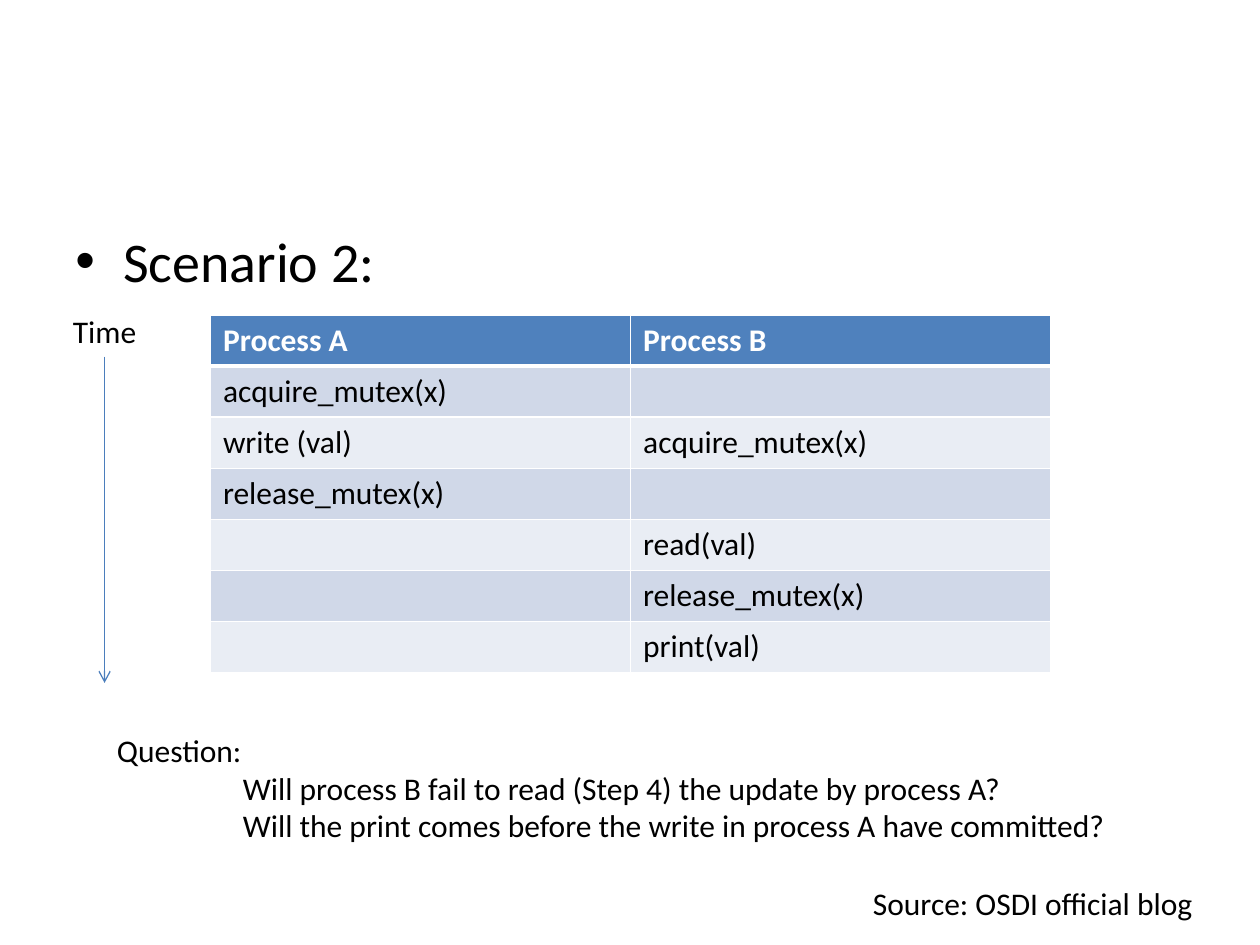
from lxml import etree
from pptx import Presentation
from pptx.dml.color import RGBColor
from pptx.enum.shapes import MSO_CONNECTOR
from pptx.enum.text import MSO_AUTO_SIZE
from pptx.oxml.ns import qn
from pptx.util import Inches, Pt

STRAIGHT = MSO_CONNECTOR.STRAIGHT
FIT_SHAPE = MSO_AUTO_SIZE.SHAPE_TO_FIT_TEXT

BLACK = RGBColor(0x00, 0x00, 0x00)
WHITE = RGBColor(0xFF, 0xFF, 0xFF)
HEADER_BLUE = RGBColor(0x4F, 0x81, 0xBD)
BAND_DARK = RGBColor(0xD0, 0xD8, 0xE8)
BAND_LIGHT = RGBColor(0xE9, 0xED, 0xF4)
ARROW_BLUE = RGBColor(0x4B, 0x7E, 0xBC)

STEPS = [
    ("Process A", "Process B"),
    ("acquire_mutex(x)", ""),
    ("write (val)", "acquire_mutex(x)"),
    ("release_mutex(x)", ""),
    ("", "read(val)"),
    ("", "release_mutex(x)"),
    ("", "print(val)"),
]


class SlideBuilder:
    font = "Calibri"
    size = 18

    def __init__(self, slide):
        self.slide = slide

    def add_run(self, p, text, size=None, color=BLACK, bold=False):
        r = p.add_run()
        r.text = text
        r.font.name = self.font
        r.font.size = Pt(size or self.size)
        r.font.color.rgb = color
        r.font.bold = bold

    def text(self, x, y, w, h, lines, wrap=True):
        """Each line is a (text, left indent in inches) pair."""
        sp = self.slide.shapes.add_textbox(Inches(x), Inches(y), Inches(w), Inches(h))
        tf = sp.text_frame
        tf.word_wrap = wrap
        tf.auto_size = FIT_SHAPE
        for i, (line, indent) in enumerate(lines):
            p = tf.paragraphs[0] if i == 0 else tf.add_paragraph()
            if indent:
                p._p.get_or_add_pPr().set("marL", str(Inches(indent)))
            self.add_run(p, line)

    def bullet(self, x, y, w, h, line, size, indent):
        sp = self.slide.shapes.add_textbox(Inches(x), Inches(y), Inches(w), Inches(h))
        tf = sp.text_frame
        tf.word_wrap = True
        p = tf.paragraphs[0]
        p.space_before = Pt(size * 0.2)
        pPr = p._p.get_or_add_pPr()
        pPr.set("marL", str(Inches(indent)))
        pPr.set("indent", str(-Inches(indent)))
        etree.SubElement(pPr, qn("a:buFont"), typeface="Arial")
        etree.SubElement(pPr, qn("a:buChar"), char="•")
        self.add_run(p, line, size)

    def border(self, cell, side, width):
        ln = etree.SubElement(cell._tc.get_or_add_tcPr(), qn(f"a:ln{side}"), w=str(Pt(width)))
        fill = etree.SubElement(ln, qn("a:solidFill"))
        etree.SubElement(fill, qn("a:srgbClr"), val=str(WHITE))

    def table(self, x, y, w, h, rows):
        table = self.slide.shapes.add_table(
            len(rows), len(rows[0]), Inches(x), Inches(y), Inches(w), Inches(h)).table
        for i, row in enumerate(rows):
            header = i == 0
            fill = HEADER_BLUE if header else (BAND_LIGHT, BAND_DARK)[i % 2]
            for j, label in enumerate(row):
                cell = table.cell(i, j)
                # The rule under the header is heavier than the grid
                widths = {"L": 1, "R": 1, "T": 3 if i == 1 else 1, "B": 3 if header else 1}
                for side, width in widths.items():
                    self.border(cell, side, width)
                cell.fill.solid()
                cell.fill.fore_color.rgb = fill
                if label:
                    self.add_run(cell.text_frame.paragraphs[0], label,
                                 color=WHITE if header else BLACK, bold=header)

    def arrow(self, x1, y1, x2, y2):
        line = self.slide.shapes.add_connector(
            STRAIGHT, Inches(x1), Inches(y1), Inches(x2), Inches(y2))
        line.line.color.rgb = ARROW_BLUE
        line.line.width = Pt(0.75)
        etree.SubElement(line.line._get_or_add_ln(), qn("a:tailEnd"), type="arrow")
        etree.SubElement(line._element.spPr, qn("a:effectLst"))


def main():
    prs = Presentation()
    prs.slide_width = Inches(10)
    prs.slide_height = Inches(7.5)
    s = SlideBuilder(prs.slides.add_slide(prs.slide_layouts[6]))

    # Scenario heading
    s.bullet(0.5, 1.75, 9, 4.95, "Scenario 2:", 32, 0.38)

    # Steps of both processes
    s.table(1.67, 2.5, 6.67, 2.84, STEPS)

    # Time axis
    s.arrow(0.83, 2.83, 0.83, 5.42)
    s.text(0.48, 2.43, 0.71, 0.4, [("Time", 0)], wrap=False)

    # Questions and source
    s.text(0.83, 5.75, 8.75, 1.01, [
        ("Question:", 0),
        ("Will process B fail to read (Step 4) the update by process A?", 1),
        ("Will the print comes before the write in process A have committed?", 1),
    ])
    s.text(6.83, 6.97, 2.77, 0.4, [("Source: OSDI official blog", 0)], wrap=False)

    prs.save("out.pptx")


if __name__ == "__main__":
    main()
